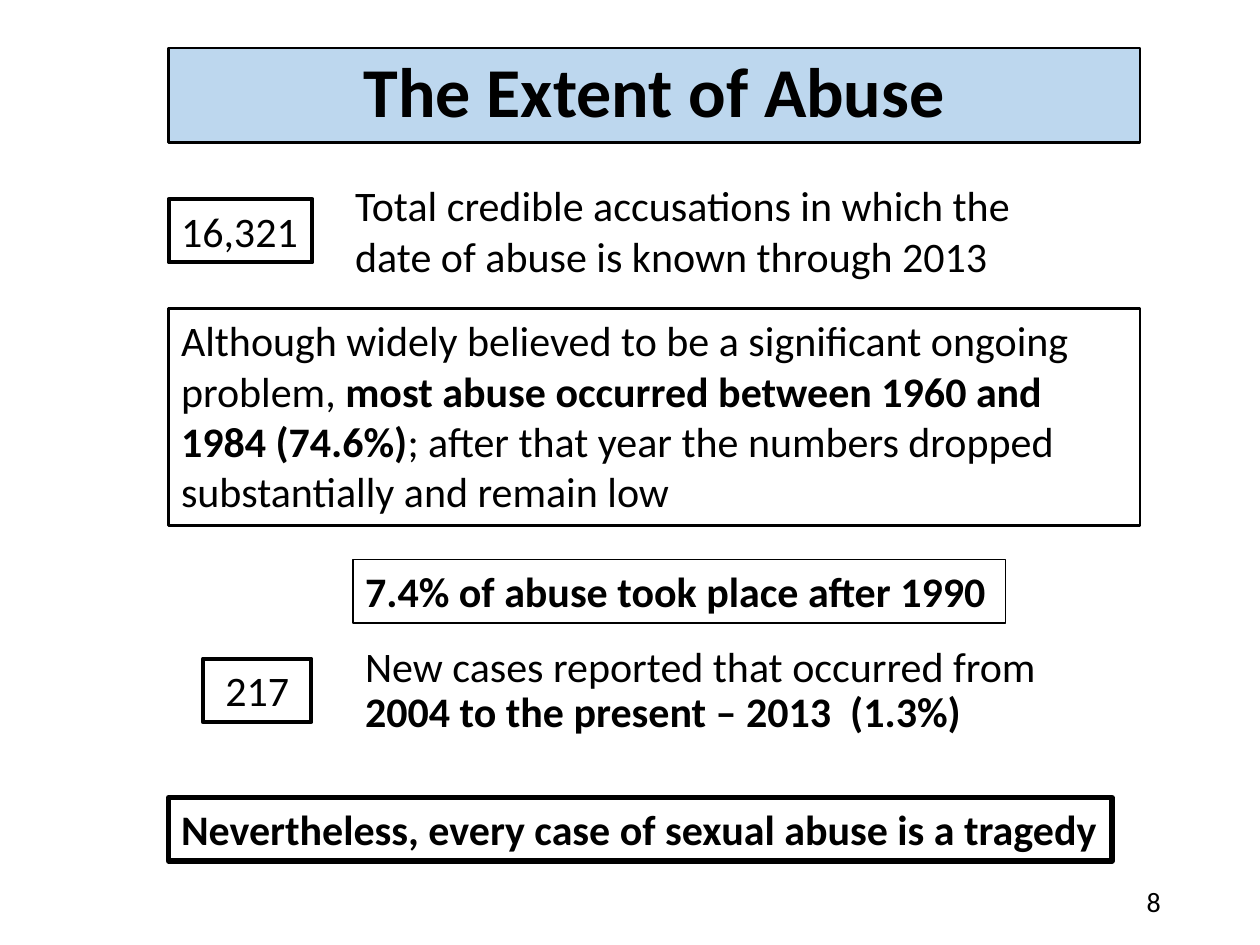
"""Build the slide on the extent of abuse, with its key figures in framed boxes."""
from pptx import Presentation
from pptx.dml.color import RGBColor
from pptx.enum.shapes import MSO_SHAPE
from pptx.enum.text import MSO_ANCHOR, PP_ALIGN
from pptx.util import Cm, Pt

THEME = {
    "font": "Calibri",
    "ink": RGBColor.from_string("000000"),
    "banner": RGBColor.from_string("BDD7EE"),
    "title": Pt(40),
    "body": Pt(24),
    "number": Pt(16),
}
LEFT, WIDTH, ROW = 3.4, 19.58, 1.28


def place(shape, left, top, width, height):
    for side, length in zip(("left", "top", "width", "height"), (left, top, width, height)):
        setattr(shape, side, Cm(length))


def write(shape, runs, size="body", anchor=MSO_ANCHOR.TOP, **paragraph_format):
    frame = shape.text_frame
    frame.word_wrap = True
    frame.vertical_anchor = anchor
    paragraph = frame.paragraphs[0]
    for name, value in ({"alignment": PP_ALIGN.LEFT} | paragraph_format).items():
        setattr(paragraph, name, value)
    for words, bold in runs:
        if words == "\n":
            paragraph.add_line_break()
            continue
        run = paragraph.add_run()
        run.text = words
        for name, value in {"name": THEME["font"], "size": THEME[size], "bold": bold}.items():
            setattr(run.font, name, value)
        run.font.color.rgb = THEME["ink"]


deck = Presentation()
deck.slide_width, deck.slide_height = Cm(25.4), Cm(19.05)
slide = deck.slides.add_slide(deck.slide_layouts[5])

title = slide.shapes.title
place(title, LEFT, 0.97, WIDTH, 1.9)
title.fill.solid()
title.fill.fore_color.rgb = THEME["banner"]
title.line.color.rgb = THEME["ink"]
title.line.width = Pt(1.5)
write(title, [("The Extent of Abuse", True)], "title", MSO_ANCHOR.MIDDLE,
      alignment=PP_ALIGN.CENTER, line_spacing=0.9)

captions = [
    ((7.11, 12.9, 15.85, 2.54),
     [("New cases reported that occurred from", False), ("\n", False),
      ("2004 to the present – 2013  (1.3%)", True)],
     {"line_spacing": 0.9, "space_before": Pt(10)}),
    ((6.91, 3.5, 14.27, 2.31),
     [("Total credible accusations in which the date of abuse is known through 2013", False)],
     {}),
    ((17.93, 17.65, 5.72, 1.02), [("8", False)],
     {"size": "number", "anchor": MSO_ANCHOR.MIDDLE, "alignment": PP_ALIGN.RIGHT}),
]
for position, runs, text_format in captions:
    caption = slide.shapes.add_textbox(*map(Cm, position))
    write(caption, runs, **text_format)

findings = [
    ((LEFT, 4.01, 2.9, ROW), 2.25, [("16,321", False)], PP_ALIGN.LEFT),
    ((LEFT, 6.22, WIDTH, 4.37), 1.5,
     [("Although widely believed to be a significant ongoing problem, ", False),
      ("most abuse occurred between 1960 and 1984 (74.6%)", True),
      ("; after that year the numbers dropped substantially and remain low", False)],
     PP_ALIGN.LEFT),
    ((4.09, 13.28, 2.19, ROW), 2.25, [("217", False)], PP_ALIGN.CENTER),
    ((LEFT, 16.08, 19.02, ROW), 3,
     [("Nevertheless, every case of sexual abuse is a tragedy", True)], PP_ALIGN.LEFT),
    ((7.11, 11.28, 13.16, ROW), 1,
     [("7.4% of abuse took place after 1990", True)], PP_ALIGN.LEFT),
]
for position, border, runs, alignment in findings:
    finding = slide.shapes.add_shape(MSO_SHAPE.RECTANGLE, *map(Cm, position))
    finding.shadow.inherit = False
    finding.fill.background()
    finding.line.color.rgb = THEME["ink"]
    finding.line.width = Pt(border)
    write(finding, runs, alignment=alignment)

deck.save("out.pptx")
